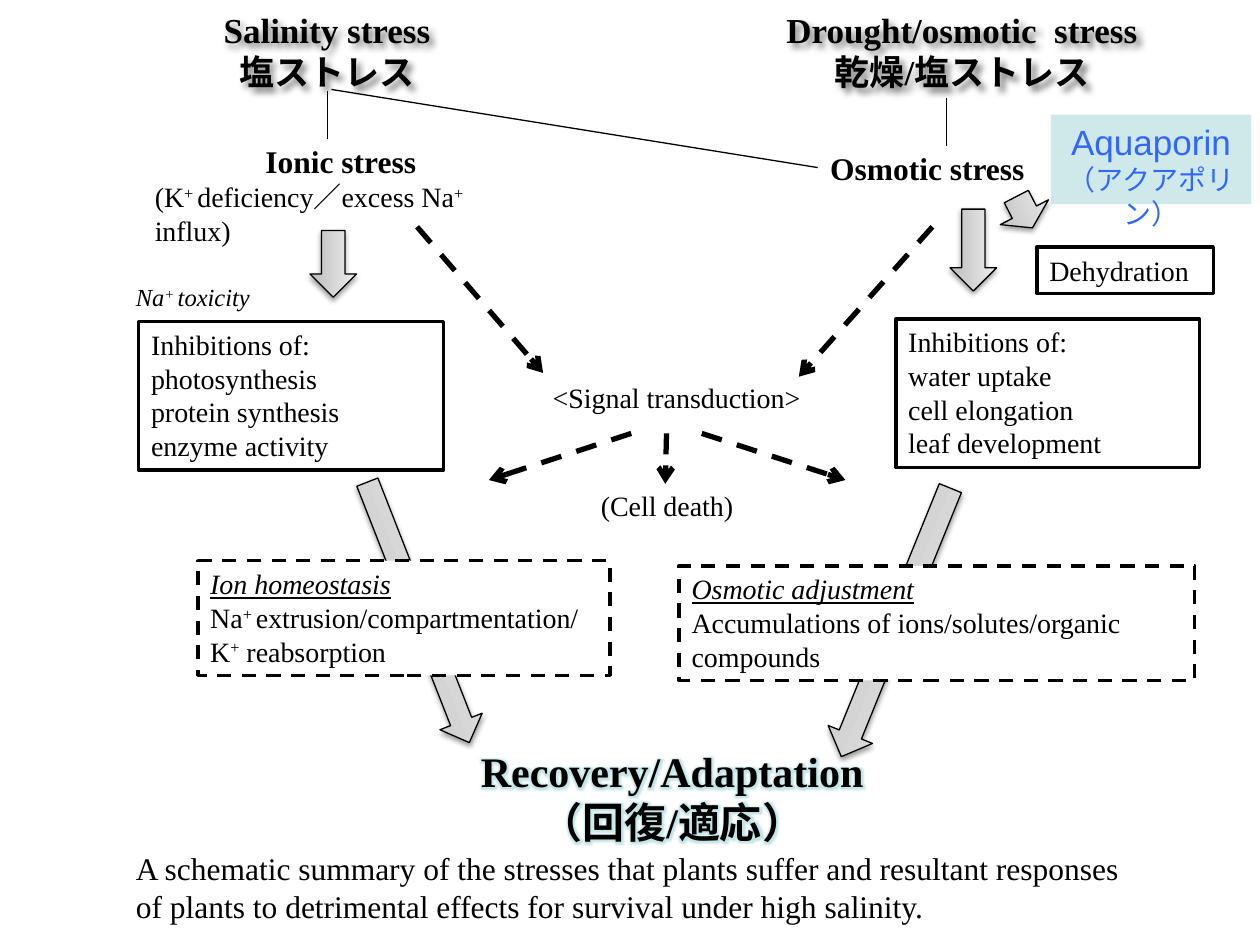
import lxml.etree
import pptx
import pptx.dml.color
import pptx.enum.dml
import pptx.enum.shapes
import pptx.enum.text
import pptx.oxml
import pptx.oxml.ns
import pptx.util

RGBColor = pptx.dml.color.RGBColor
BLACK = RGBColor(0, 0, 0)
WHITE = RGBColor(255, 255, 255)
BLUE = RGBColor(0x33, 0x66, 0xFF)
TEAL = RGBColor(0x9E, 0xD3, 0xD7)
GREY_STOPS = (RGBColor(0xBD, 0xBD, 0xBD), RGBColor(0xEE, 0xEE, 0xEE))
SERIF = "Times New Roman"
CENTER = pptx.enum.text.PP_ALIGN.CENTER
DASH = pptx.enum.dml.MSO_LINE.DASH
SHAPES = pptx.enum.shapes.MSO_SHAPE
qn = pptx.oxml.ns.qn

prs = pptx.Presentation()
prs.slide_width = pptx.util.Inches(10)
prs.slide_height = pptx.util.Inches(7.5)
COL = prs.slide_width // 100
ROW = prs.slide_height // 75


def place(box, x, y):
    """Turn columns and rows inside a region into slide coordinates."""
    return round((box[0] + x) * COL), round((box[1] + y) * ROW)


def frame(box, at):
    """Return left, top, width and height of a part of a region."""
    return *place(box, *at[:2]), round(at[2] * COL), round(at[3] * ROW)


def add_shadow(sp, blur, dist, angle, alpha):
    """Give a shape a soft black shadow; lengths are in points."""
    sp.shadow.inherit = False
    effects = sp._element.spPr.find(qn("a:effectLst"))
    shadow = lxml.etree.SubElement(
        effects, qn("a:outerShdw"), blurRad=str(pptx.util.Pt(blur)),
        dist=str(pptx.util.Pt(dist)), dir=str(angle * 60000), rotWithShape="0")
    color = lxml.etree.SubElement(shadow, qn("a:srgbClr"), val=str(BLACK))
    lxml.etree.SubElement(color, qn("a:alpha"), val=str(alpha * 1000))


def write(sp, lines, size=16, font=SERIF, color=BLACK, align=None, wrap=True):
    """Fill a shape with (text, format) lines, where ^ toggles superscript."""
    tf = sp.text_frame
    tf.word_wrap = wrap
    tf.vertical_anchor = pptx.enum.text.MSO_ANCHOR.TOP
    for i, line in enumerate(lines):
        text, style = (line, {}) if isinstance(line, str) else line
        p = tf.add_paragraph() if i else tf.paragraphs[0]
        p.alignment = style.get("align", align) or pptx.enum.text.PP_ALIGN.LEFT
        for j, part in enumerate(text.split("^")):
            if not part:
                continue
            r = p.add_run()
            r.text = part
            r.font.size = pptx.util.Pt(style.get("size", size))
            r.font.name = font
            r.font.color.rgb = color
            r.font.bold = style.get("bold", False)
            r.font.italic = style.get("italic", False)
            r.font.underline = style.get("underline", False)
            if j % 2:
                r.font._element.set("baseline", "30000")


def add_text(s, box, at, lines, **options):
    """Add a text box to a region."""
    sp = s.shapes.add_textbox(*frame(box, at))
    write(sp, lines, **options)
    return sp


def add_box(s, box, at, lines, fill=WHITE, outline=True, dash=None, **options):
    """Add a rectangle with text to a region."""
    sp = s.shapes.add_shape(SHAPES.RECTANGLE, *frame(box, at))
    sp.shadow.inherit = False
    sp.fill.solid()
    sp.fill.fore_color.rgb = fill
    if outline:
        sp.line.color.rgb = BLACK
        sp.line.width = pptx.util.Pt(2)
        sp.line.dash_style = dash
    else:
        sp.line.fill.background()
    write(sp, lines, **options)
    return sp


def add_block_arrow(s, box, at, rotation):
    """Add a rotated grey block arrow to a region."""
    sp = s.shapes.add_shape(SHAPES.RIGHT_ARROW, *frame(box, at))
    sp.rotation = rotation
    sp.fill.gradient()
    sp.fill.gradient_angle = 90
    for stop, color in zip(sp.fill.gradient_stops, GREY_STOPS):
        stop.color.rgb = color
    sp.line.color.rgb = BLACK
    sp.line.width = pptx.util.Pt(0.75)
    add_shadow(sp, 3.1, 1.6, 90, 38)


def add_line(s, box, start, end, arrow=False):
    """Add a thin line, or a thick dashed arrow, to a region."""
    sp = s.shapes.add_connector(pptx.enum.shapes.MSO_CONNECTOR.STRAIGHT,
                                *place(box, *start), *place(box, *end))
    sp.line.color.rgb = BLACK
    sp.line.width = pptx.util.Pt(3 if arrow else 0.75)
    if arrow:
        sp.line.dash_style = DASH
        lxml.etree.SubElement(sp.line._get_or_add_ln(), qn("a:tailEnd"), type="arrow")
    lxml.etree.SubElement(sp._element.spPr, qn("a:effectLst"))


def add_heading(s, box, at, lines):
    """Add a bold, centred and shadowed heading to a region."""
    sp = add_text(s, box, at, [(t, {"bold": True}) for t in lines],
                  size=20, align=CENTER)
    sp.fill.background()
    add_shadow(sp, 4, 3, 45, 50)


def salinity_column(s, box):
    """Draw the path from salinity stress to ion homeostasis."""
    add_heading(s, box, (4.7, 0.2, 22.5, 7.7), ["Salinity stress", "塩ストレス"])
    add_text(s, box, (1.3, 10.8, 31.5, 9.4), [
        ("Ionic stress", {"size": 18, "bold": True, "align": CENTER}),
        "(K^+ ^deficiency／excess Na^+^ influx)"])
    add_line(s, box, (16, 7.2), (16, 11))
    add_line(s, box, (16.3, 7.1), (54.9, 13.3))
    add_block_arrow(s, box, (13.8, 19.1, 5.3, 3.7), 90)
    add_text(s, box, (-0.2, 21.9, 11.5, 3.4),
             [("Na^+ ^toxicity", {"italic": True})], size=14, wrap=False)
    add_box(s, box, (1, 25.5, 24.2, 11.8), [
        "Inhibitions of:", "photosynthesis", "protein synthesis", "enzyme activity"])
    add_block_arrow(s, box, (12.1, 46.8, 22.2, 3.6), 68.6)
    add_box(s, box, (5.7, 44.5, 32.7, 9.1), [
        ("Ion homeostasis", {"italic": True, "underline": True}),
        "Na^+ ^extrusion/compartmentation/", "K^+^ reabsorption"], dash=DASH)


def drought_column(s, box):
    """Draw the path from drought stress to osmotic adjustment."""
    add_heading(s, box, (5, 0.2, 34.7, 7.7),
                ["Drought/osmotic  stress", "乾燥/塩ストレス"])
    add_line(s, box, (21.1, 7.8), (21.1, 11.6))
    add_text(s, box, (10.9, 11.3, 17.6, 4),
             [("Osmotic stress", {"bold": True})], size=18, wrap=False)
    add_box(s, box, (17.1, 25.3, 24.1, 11.8), [
        "Inhibitions of:", "water uptake", "cell elongation", "leaf development"])
    add_box(s, box, (28.3, 19.6, 14, 3.7), ["Dehydration"])
    add_block_arrow(s, box, (25.9, 14.7, 2.8, 4.3), 62.7)
    add_block_arrow(s, box, (20, 18, 6.5, 3.7), 90)
    add_block_arrow(s, box, (5.6, 47.5, 23, 3.8), 112.1)
    add_box(s, box, (-0.1, 44.9, 40.9, 9.1), [
        ("Osmotic adjustment", {"italic": True, "underline": True}),
        "Accumulations of ions/solutes/organic compounds"], dash=DASH)
    sp = add_box(s, box, (29.4, 9.1, 15.9, 7.1),
                 [("Aquaporin", {"size": 20}), "（アクアポリン）"],
                 fill=TEAL, outline=False, font="Arial", color=BLUE, align=CENTER)
    color = sp._element.spPr.find(qn("a:solidFill"))[0]
    lxml.etree.SubElement(color, qn("a:alpha"), val="49000")


def signal_region(s, box):
    """Draw signal transduction with its incoming and outgoing arrows."""
    add_text(s, box, (5.1, 11.7, 31.2, 3.7), ["<Signal transduction>"], align=CENTER)
    add_text(s, box, (13.7, 20.3, 12.7, 3.7), ["(Cell death)"], wrap=False)
    for start, end in [((0.1, 0), (10.1, 11.6)), ((41, 0), (30.4, 11.9)),
                       ((17.1, 16.4), (5.8, 20.1)), ((19.9, 16.4), (19.8, 20.4)),
                       ((22.7, 16.4), (34.1, 20.1))]:
        add_line(s, box, start, end, arrow=True)


def outcome_region(s, box):
    """Write the glowing outcome and the caption below it."""
    sp = add_text(s, box, (27.2, 0.7, 32.7, 9.1), [
        ("Recovery/Adaptation", {"bold": True}), ("（回復/適応）", {"bold": True})],
        size=24, align=CENTER, wrap=False)
    for p in sp.text_frame.paragraphs:
        for r in p.runs:
            effects = lxml.etree.Element(qn("a:effectLst"))
            glow = lxml.etree.SubElement(effects, qn("a:glow"), rad=str(pptx.util.Pt(8)))
            color = lxml.etree.SubElement(glow, qn("a:srgbClr"), val=str(TEAL))
            lxml.etree.SubElement(color, qn("a:alpha"), val="60000")
            r.font._element.find(qn("a:solidFill")).addnext(effects)
    add_text(s, box, (0, 8.9, 81.5, 7.1), [
        "A schematic summary of the stresses that plants suffer and resultant responses "
        "of plants to detrimental effects for survival under high salinity."], size=18)


def main():
    """Build the slide and save it."""
    s = prs.slides.add_slide(prs.slide_layouts[6])
    salinity_column(s, (10, 0))
    drought_column(s, (54, 0))
    signal_region(s, (33, 18))
    outcome_region(s, (9.8, 58))
    prs.save("out.pptx")


if __name__ == "__main__":
    main()
